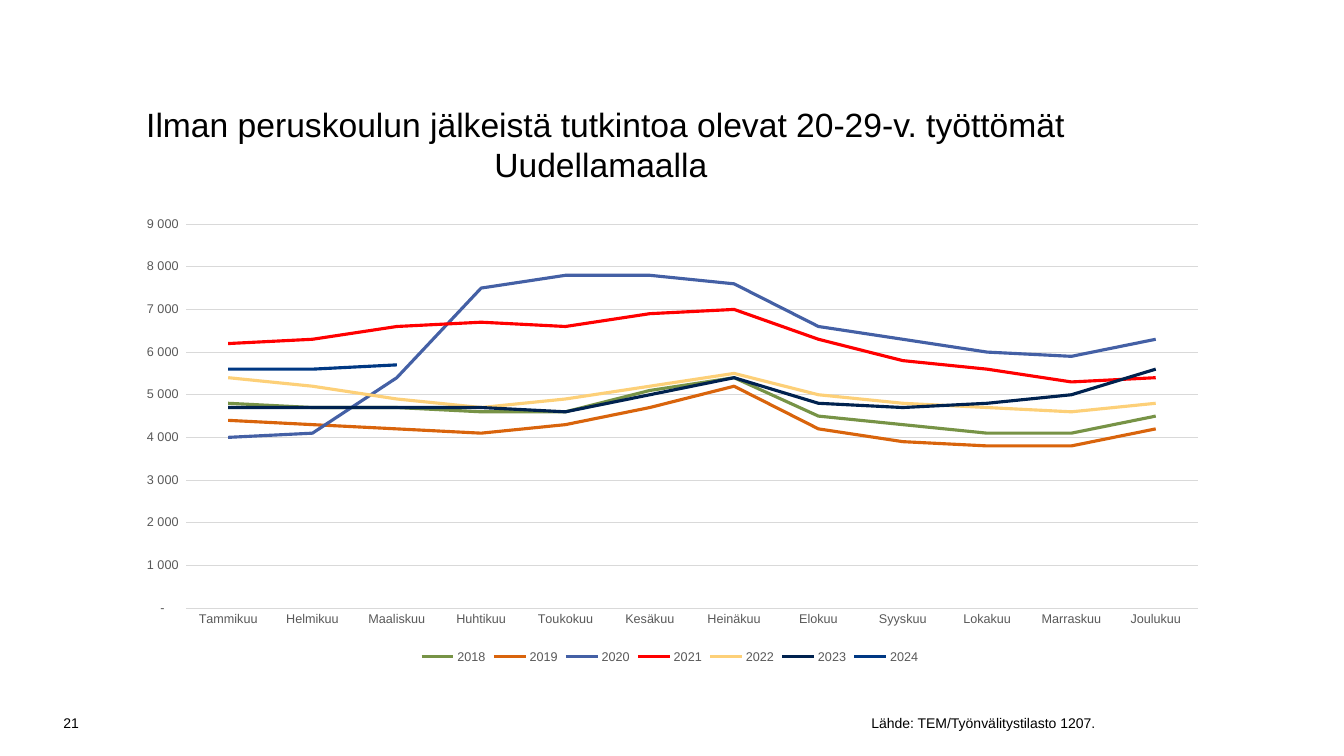
from lxml import etree
from pptx import Presentation
from pptx.chart.data import CategoryChartData
from pptx.dml.color import RGBColor
from pptx.enum.chart import XL_CHART_TYPE, XL_LEGEND_POSITION, XL_TICK_MARK
from pptx.enum.text import MSO_ANCHOR, PP_ALIGN
from pptx.oxml.ns import qn
from pptx.util import Inches, Pt

LINE_CHART = XL_CHART_TYPE.LINE
LEGEND_BOTTOM = XL_LEGEND_POSITION.BOTTOM
NO_TICK = XL_TICK_MARK.NONE
TOP, MIDDLE = MSO_ANCHOR.TOP, MSO_ANCHOR.MIDDLE
CENTER, RIGHT = PP_ALIGN.CENTER, PP_ALIGN.RIGHT

BLACK = RGBColor(0x00, 0x00, 0x00)
GRAY = RGBColor(0x59, 0x59, 0x59)
GRID_GRAY = RGBColor(0xD9, 0xD9, 0xD9)
GREEN = RGBColor(0x77, 0x93, 0x46)
ORANGE = RGBColor(0xD9, 0x64, 0x0C)
BLUE = RGBColor(0x44, 0x60, 0xA5)
RED = RGBColor(0xFF, 0x00, 0x00)
YELLOW = RGBColor(0xFD, 0xD0, 0x78)
NAVY = RGBColor(0x00, 0x22, 0x4F)
DARK_BLUE = RGBColor(0x00, 0x38, 0x83)

NUMBER_FORMAT = r'_-* #\ ##0_-;\-* #\ ##0_-;_-* "-"??_-;_-'
MONTHS = ["Tammikuu", "Helmikuu", "Maaliskuu", "Huhtikuu", "Toukokuu", "Kesäkuu",
          "Heinäkuu", "Elokuu", "Syyskuu", "Lokakuu", "Marraskuu", "Joulukuu"]
UNEMPLOYED = [
    ("2018", GREEN, [4800, 4700, 4700, 4600, 4600, 5100, 5400, 4500, 4300, 4100, 4100, 4500]),
    ("2019", ORANGE, [4400, 4300, 4200, 4100, 4300, 4700, 5200, 4200, 3900, 3800, 3800, 4200]),
    ("2020", BLUE, [4000, 4100, 5400, 7500, 7800, 7800, 7600, 6600, 6300, 6000, 5900, 6300]),
    ("2021", RED, [6200, 6300, 6600, 6700, 6600, 6900, 7000, 6300, 5800, 5600, 5300, 5400]),
    ("2022", YELLOW, [5400, 5200, 4900, 4700, 4900, 5200, 5500, 5000, 4800, 4700, 4600, 4800]),
    ("2023", NAVY, [4700, 4700, 4700, 4700, 4600, 5000, 5400, 4800, 4700, 4800, 5000, 5600]),
    ("2024", DARK_BLUE, [5600, 5600, 5700] + [None] * 9),
]


class SlideBuilder:
    """Holds the font and the current slide."""

    def __init__(self, slide, font_name):
        self.slide = slide
        self.font_name = font_name

    def style_font(self, font, size, color):
        font.name = self.font_name
        font.size = Pt(size)
        font.color.rgb = color

    def text(self, left, top, width, height, text, size, align, anchor=MIDDLE):
        box = self.slide.shapes.add_textbox(
            Inches(left), Inches(top), Inches(width), Inches(height))
        frame = box.text_frame
        frame.word_wrap = True
        frame.vertical_anchor = anchor
        frame.text = text
        paragraph = frame.paragraphs[0]
        paragraph.alignment = align
        self.style_font(paragraph.runs[0].font, size, BLACK)

    def line_chart(self, left, top, width, height, categories, rows, plot_area):
        data = CategoryChartData(number_format=NUMBER_FORMAT)
        data.categories = categories
        for name, _, values in rows:
            data.add_series(name, values)
        chart = self.slide.shapes.add_chart(
            LINE_CHART, Inches(left), Inches(top), Inches(width), Inches(height), data).chart
        self.style_font(chart.font, 10, BLACK)
        chart.has_title = False
        chart.plots[0].vary_by_categories = False

        # Legend
        chart.has_legend = True
        chart.legend.position = LEGEND_BOTTOM
        chart.legend.include_in_layout = False
        self.style_font(chart.legend.font, 9, GRAY)

        # Axes and gridlines
        for axis in (chart.category_axis, chart.value_axis):
            axis.major_tick_mark = axis.minor_tick_mark = NO_TICK
            self.style_font(axis.tick_labels.font, 9, GRAY)
        value_axis = chart.value_axis
        value_axis.minimum_scale, value_axis.maximum_scale = 0, 9000
        value_axis.major_unit = 1000
        value_axis.tick_labels.number_format = NUMBER_FORMAT
        value_axis.tick_labels.number_format_is_linked = False
        value_axis.format.line.fill.background()
        for line in (chart.category_axis.format.line, value_axis.major_gridlines.format.line):
            line.color.rgb = GRID_GRAY
            line.width = Pt(0.75)

        # Series lines
        for series, (_, color, _) in zip(chart.plots[0].series, rows):
            series.smooth = False
            series.format.line.color.rgb = color
            series.format.line.width = Pt(2.25)
        self.place_plot(chart, plot_area)

    def place_plot(self, chart, fractions):
        plot = chart.plots[0]._element.getparent()
        for old_layout in plot.findall(qn("c:layout")):
            plot.remove(old_layout)
        layout = etree.Element(qn("c:layout"))
        manual = etree.SubElement(layout, qn("c:manualLayout"))
        settings = [("layoutTarget", "inner"), ("xMode", "edge"), ("yMode", "edge")]
        for tag, value in settings + list(zip("xywh", fractions)):
            etree.SubElement(manual, qn("c:" + tag)).set("val", str(value))
        plot.insert(0, layout)


def main():
    presentation = Presentation()
    presentation.slide_width = Inches(13.33)
    presentation.slide_height = Inches(7.5)
    slide = presentation.slides.add_slide(presentation.slide_layouts[6])
    builder = SlideBuilder(slide, "Arial")

    # Source and slide number
    builder.text(1.19, 6.97, 9.77, 0.4, "Lähde: TEM/Työnvälitystilasto 1207.", 10, RIGHT)
    builder.text(0.3, 6.98, 0.58, 0.39, "21", 10, RIGHT)

    # Title
    builder.text(1.04, 0.98, 9.93, 0.88,
                 "Ilman peruskoulun jälkeistä tutkintoa olevat 20-29-v. työttömät Uudellamaalla ",
                 24, CENTER, TOP)

    # Unemployed by month and year
    builder.line_chart(1.19, 2.04, 10.91, 4.59, MONTHS, UNEMPLOYED,
                       plot_area=(0.06, 0.04, 0.92, 0.83))

    presentation.save("out.pptx")


if __name__ == "__main__":
    main()
